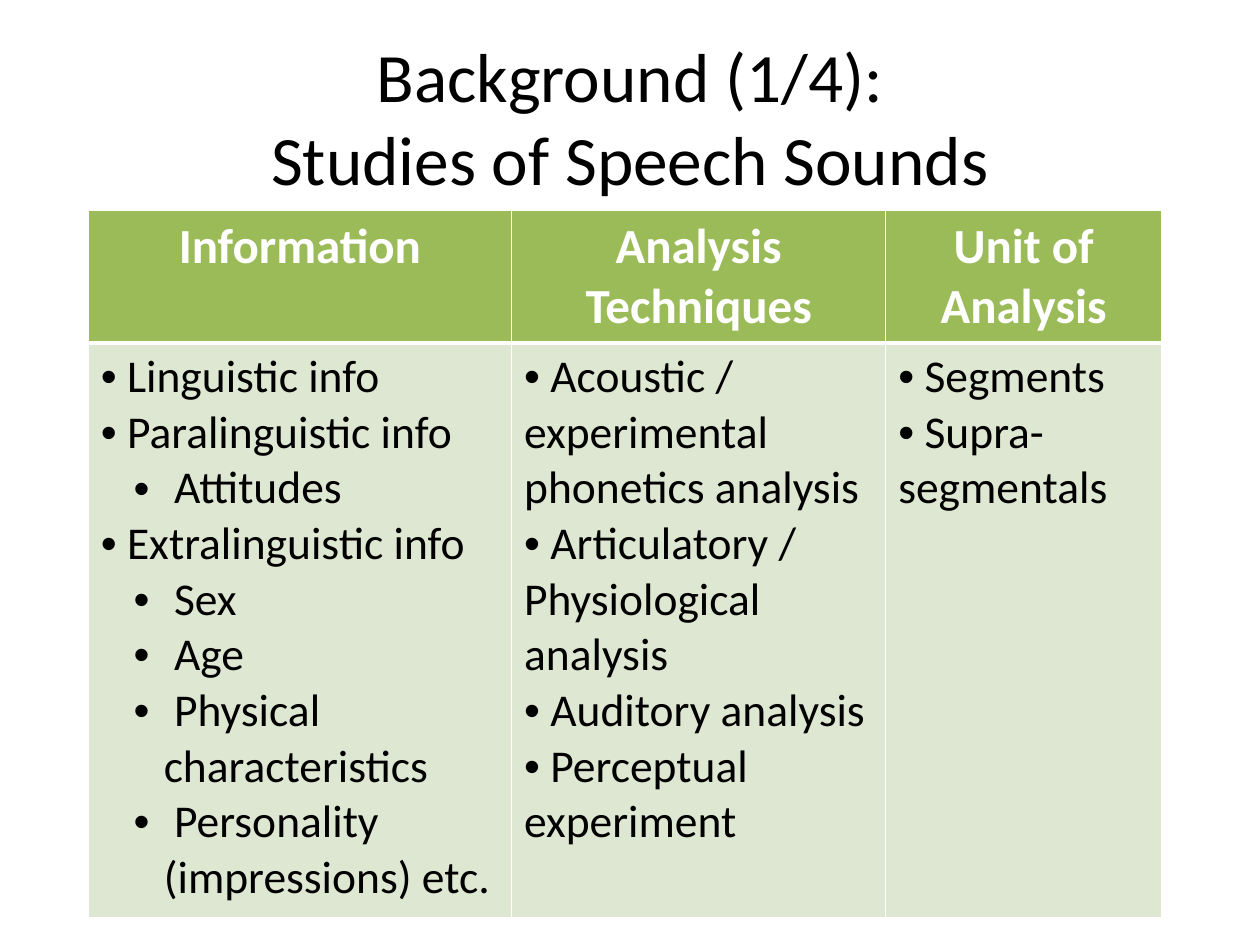
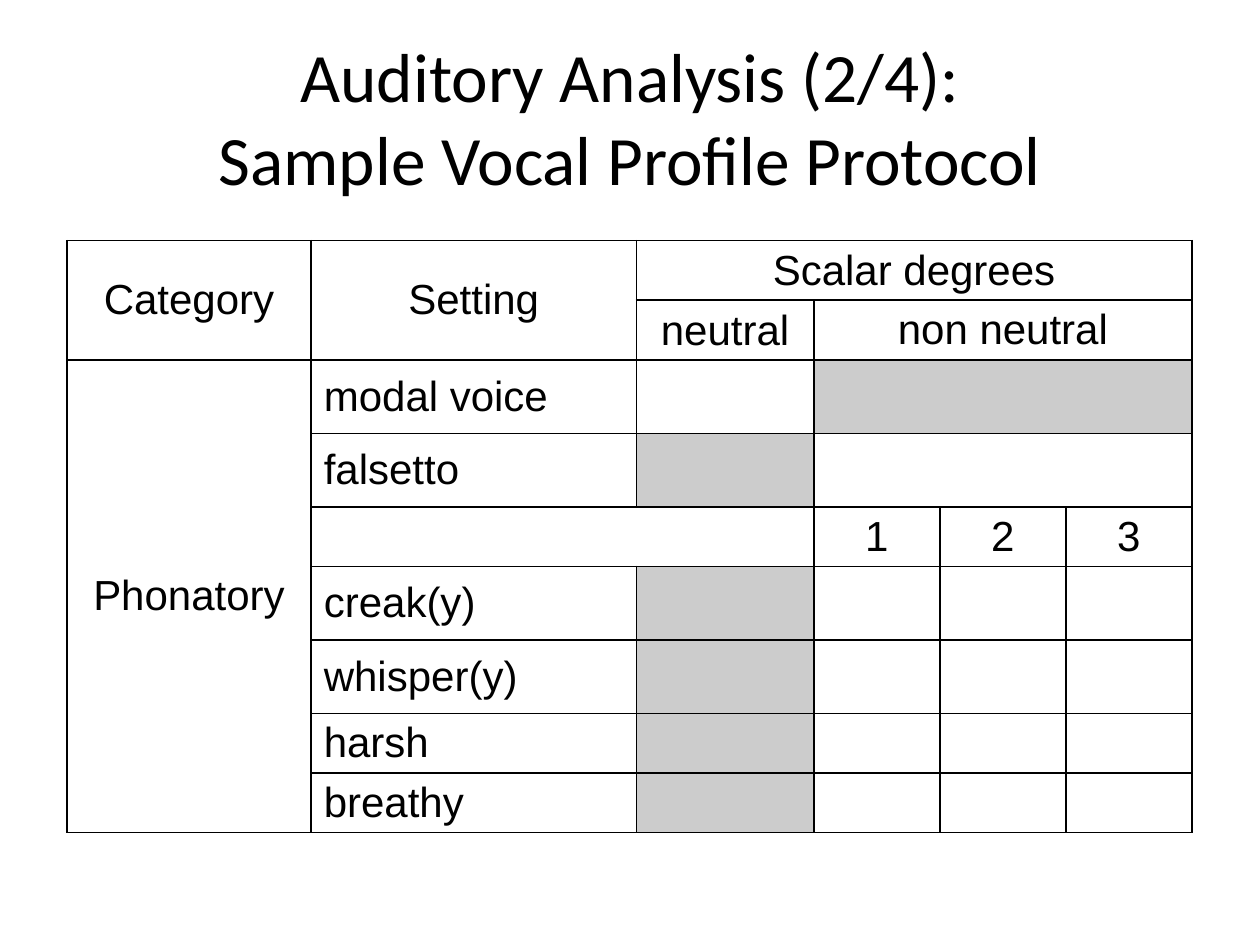
from lxml import etree
from pptx import Presentation
from pptx.dml.color import RGBColor
from pptx.enum.text import MSO_ANCHOR, MSO_AUTO_SIZE, PP_ALIGN
from pptx.oxml.ns import qn
from pptx.util import Inches, Pt

LEFT, CENTER = PP_ALIGN.LEFT, PP_ALIGN.CENTER
TOP, MIDDLE, BOTTOM = MSO_ANCHOR.TOP, MSO_ANCHOR.MIDDLE, MSO_ANCHOR.BOTTOM
NO_FIT = MSO_AUTO_SIZE.NONE

COLORS = {"ink": "000000", "paper": "FFFFFF", "head": "9BBB59",
          "body": "DEE7D1", "shade": "CCCCCC"}
TITLE_BOX = (0.5, 0.3, 9, 1.25)
SIDES = ("lnL", "lnR", "lnT", "lnB")

# Each column: heading, then (level, item) pairs
STUDIES = [
    ("Information", [
        (0, "Linguistic info"), (0, "Paralinguistic info"), (1, "Attitudes"),
        (0, "Extralinguistic info"), (1, "Sex"), (1, "Age"),
        (1, "Physical characteristics"),
        (1, "Personality (impressions) etc.")]),
    ("Analysis Techniques", [
        (0, "Acoustic / experimental phonetics analysis"),
        (0, "Articulatory / Physiological analysis"),
        (0, "Auditory analysis"), (0, "Perceptual experiment")]),
    ("Unit of Analysis", [(0, "Segments"), (0, "Supra-segmentals")]),
]

# Merged areas: first row, first column, last row, last column
SPANS = [(0, 0, 1, 0), (0, 1, 1, 1), (0, 2, 0, 5), (1, 3, 1, 5),
         (2, 0, 8, 0), (2, 3, 2, 5), (3, 3, 3, 5), (4, 1, 4, 2)]
LABELS = {(0, 0): "Category", (0, 1): "Setting", (0, 2): "Scalar degrees",
          (1, 2): "neutral", (1, 3): "non neutral", (2, 0): "Phonatory",
          (4, 3): "1", (4, 4): "2", (4, 5): "3"}
SETTINGS = {2: "modal voice", 3: "falsetto", 5: "creak(y)",
            6: "whisper(y)", 7: "harsh", 8: "breathy"}
SHADED = {(2, 3)} | {(row, 2) for row in SETTINGS if row != 2}


def rgb(name):
    return RGBColor.from_string(COLORS[name])


def style(para, font, size, color="ink", bold=False, align=LEFT):
    para.alignment = align
    para.font.name = font
    para.font.size = Pt(size)
    para.font.bold = bold
    para.font.color.rgb = rgb(color)


def add_slide(prs, title):
    slide = prs.slides.add_slide(prs.slide_layouts[5])
    shape = slide.shapes.title
    shape.left, shape.top, shape.width, shape.height = map(Inches, TITLE_BOX)
    frame = shape.text_frame
    frame.text = title
    frame.auto_size = NO_FIT
    frame.vertical_anchor = MIDDLE
    style(frame.paragraphs[0], "Calibri", 39.6, align=CENTER)
    return slide


def add_grid(slide, box, cols, rows):
    """Add a plain table whose columns and rows share the box by weight."""
    x, y, width, height = map(Inches, box)
    table = slide.shapes.add_table(len(rows), len(cols),
                                   x, y, width, height).table
    table.first_row = table.horz_banding = False
    for col, part in zip(table.columns, cols):
        col.width = int(width * part / sum(cols))
    for row, part in zip(table.rows, rows):
        row.height = int(height * part / sum(rows))
    return table


def set_edges(cell, color, widths):
    props = cell._tc.get_or_add_tcPr()
    for spot, (side, width) in enumerate(zip(SIDES, widths)):
        line = etree.Element(qn("a:" + side), w=str(Pt(width)))
        fill = etree.SubElement(line, qn("a:solidFill"))
        etree.SubElement(fill, qn("a:srgbClr"), val=COLORS[color])
        props.insert(spot, line)


def paint(cell, fill, edge, widths):
    if fill:
        cell.fill.solid()
        cell.fill.fore_color.rgb = rgb(fill)
    else:
        cell.fill.background()
    set_edges(cell, edge, widths)


def set_bullet(para, level):
    props = para._p.get_or_add_pPr()
    para.level = level
    props.set("marL", str(Inches(0.5 * level)))
    props.set("indent", str(Inches(-0.24 * level)))
    for spot, (tag, key, value) in enumerate([
            ("a:buFont", "typeface", "Arial"), ("a:buChar", "char", "•")]):
        mark = etree.Element(qn(tag))
        mark.set(key, value)
        props.insert(spot, mark)


def fill_list(cell, items):
    frame = cell.text_frame
    for spot, (level, item) in enumerate(items):
        para = frame.add_paragraph() if spot else frame.paragraphs[0]
        para.text = " " + item
        style(para, "Calibri", 26)
        set_bullet(para, level)


def add_studies(slide, box):
    table = add_grid(slide, box, (3.36, 2.97, 2.19), (1.04, 4.56))
    for col, (name, items) in enumerate(STUDIES):
        head, body = table.cell(0, col), table.cell(1, col)
        head.text = name
        style(head.text_frame.paragraphs[0], "Calibri", 28, "paper", True,
              CENTER)
        paint(head, "head", "paper", (1, 1, 1, 3))
        fill_list(body, items)
        paint(body, "body", "paper", (1, 1, 3, 1))


def add_profile(slide, box):
    low, tall = 0.47, 0.58
    table = add_grid(slide, box, (1.94, 2.58, 1.41, 1, 1, 1),
                     (low, low, tall, tall, low, tall, tall, low, low))
    for top, left, end, right in SPANS:
        table.cell(top, left).merge(table.cell(end, right))
    # Fills and rules
    for row in range(len(table.rows)):
        for col in range(len(table.columns)):
            cell = table.cell(row, col)
            shade = "shade" if (row, col) in SHADED else None
            paint(cell, shade, "ink", (1, 1, 1, 1))
            cell.margin_top = cell.margin_bottom = Inches(0.04)
    # Headings, then the names of the settings
    names = {(row, 1): name for row, name in SETTINGS.items()}
    for spot, text in {**LABELS, **names}.items():
        cell = table.cell(*spot)
        cell.text = text
        cell.vertical_anchor = BOTTOM if spot == (1, 2) else MIDDLE
        style(cell.text_frame.paragraphs[0], "Arial", 24,
              align=LEFT if spot in names else CENTER)


def main():
    prs = Presentation()
    prs.slide_width, prs.slide_height = Inches(10), Inches(7.5)
    add_studies(add_slide(prs, "Background (1/4):\vStudies of Speech Sounds"),
                (0.7, 1.67, 8.52, 5.6))
    add_profile(add_slide(
        prs, "Auditory Analysis (2/4):\vSample Vocal Profile Protocol"),
        (0.53, 1.91, 8.93, 4.7))
    prs.save("out.pptx")


if __name__ == "__main__":
    main()
